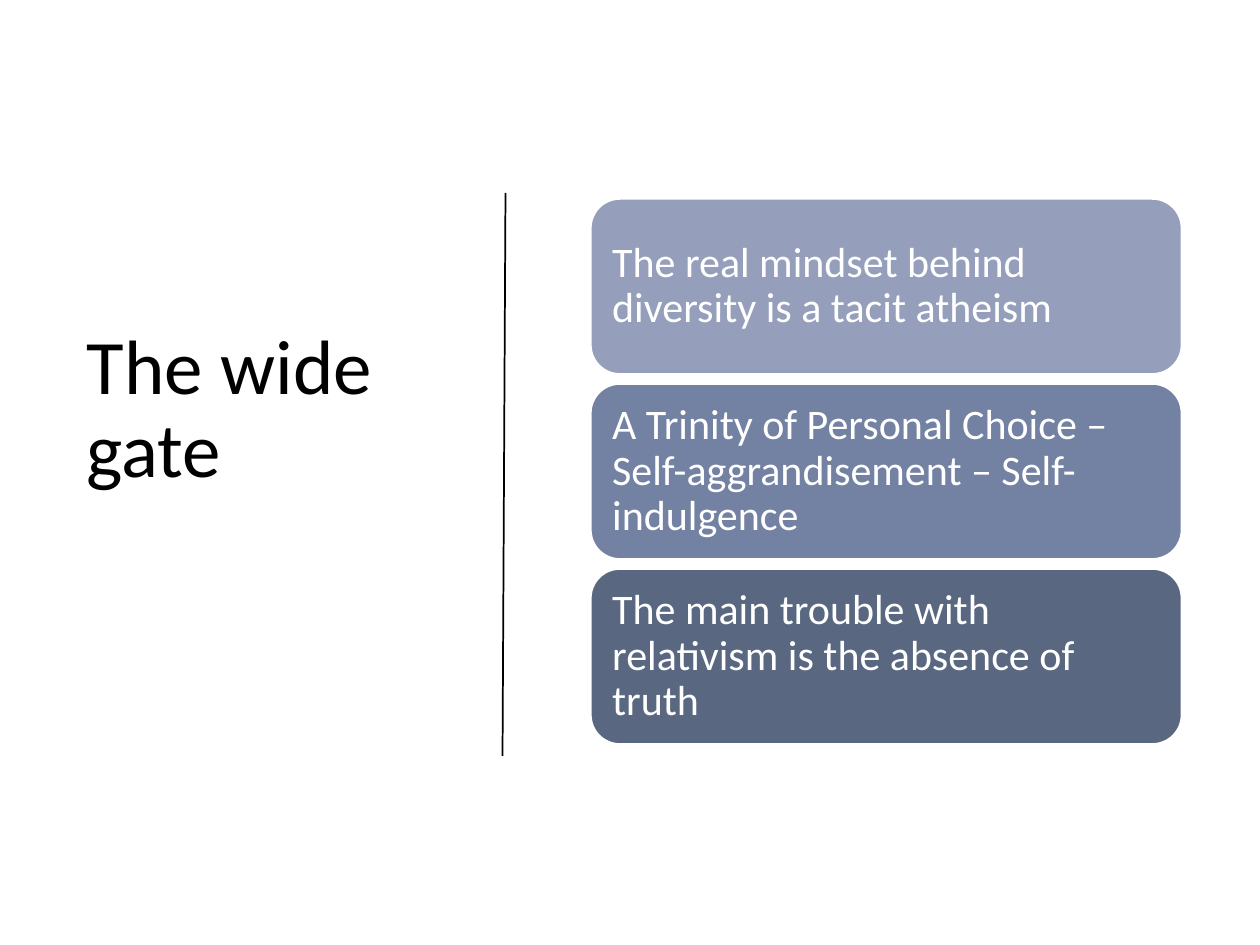
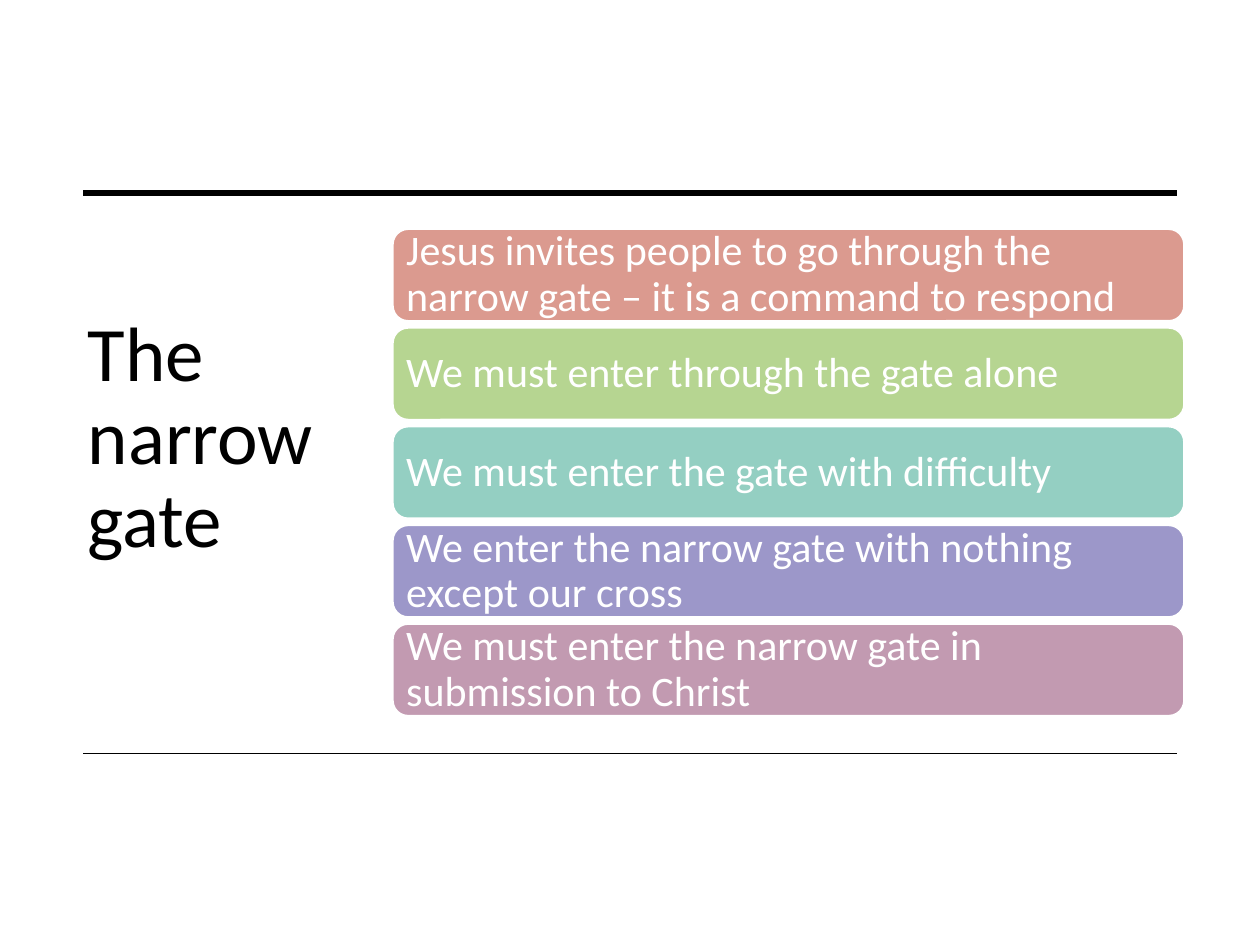
from dataclasses import dataclass

from lxml.etree import SubElement
from pptx import Presentation
from pptx.dml.color import RGBColor
from pptx.enum.shapes import MSO_CONNECTOR, MSO_SHAPE
from pptx.enum.text import MSO_ANCHOR, MSO_AUTO_SIZE, PP_ALIGN
from pptx.oxml.ns import qn
from pptx.slide import Slide
from pptx.text.text import TextFrame
from pptx.util import Cm, Pt

FONT = "Calibri"
BLACK, WHITE = "000000", "FFFFFF"
TITLE_SIZE, BOX_SIZE = 44, 24


@dataclass(frozen=True)
class Rule:
    x1: float
    y1: float
    x2: float
    y2: float
    weight: float


@dataclass(frozen=True)
class Stack:
    """Equal rounded boxes, one below the other; lengths in centimetres."""
    left: float
    top: float
    width: float
    height: float
    pitch: float
    inset: float
    points: tuple[tuple[str, str], ...]


@dataclass(frozen=True)
class GateSlide:
    title: str
    title_area: tuple[float, float, float, float]
    rules: tuple[Rule, ...]
    stack: Stack


GATES = (
    GateSlide(
        "The wide gate", (1.5, 3.53, 7.54, 9.5),
        (Rule(10.13, 15.24, 10.19, 3.89, 1),),
        Stack(11.91, 4.01, 11.91, 3.53, 3.73, 0.26, (
            ("959EBB", "The real mindset behind diversity is a tacit atheism"),
            ("7381A2", "A Trinity of Personal Choice – Self-aggrandisement – Self-indulgence"),
            ("596781", "The main trouble with relativism is the absence of truth"),
        )),
    ),
    GateSlide(
        "The narrow gate", (1.52, 4.27, 7.62, 9.17),
        (Rule(1.68, 3.89, 23.72, 3.89, 3.5), Rule(1.68, 15.19, 23.72, 15.19, 1)),
        Stack(7.92, 4.62, 15.95, 1.85, 1.99, 0.18, (
            ("DB9A8F", "Jesus invites people to go through the narrow gate – it is a command to respond"),
            ("B6D591", "We must enter through the gate alone"),
            ("94CFC2", "We must enter the gate with difficulty"),
            ("9C97C9", "We enter the narrow gate with nothing except our cross"),
            ("C29AB1", "We must enter the narrow gate in submission to Christ"),
        )),
    ),
)


def rgb(value: str) -> RGBColor:
    return RGBColor.from_string(value)


def write(tf: TextFrame, text: str, *, size: float, color: str,
          inset_x: float = 0.25, inset_y: float = 0.13) -> None:
    tf.word_wrap = True
    tf.auto_size = MSO_AUTO_SIZE.NONE
    tf.vertical_anchor = MSO_ANCHOR.MIDDLE
    tf.margin_left = tf.margin_right = Cm(inset_x)
    tf.margin_top = tf.margin_bottom = Cm(inset_y)
    p = tf.paragraphs[0]
    p.alignment = PP_ALIGN.LEFT
    p.line_spacing = 0.9
    r = p.add_run()
    r.text = text
    r.font.name = FONT
    r.font.size = Pt(size)
    r.font.color.rgb = rgb(color)


def add_title(s: Slide, text: str, area: tuple[float, float, float, float]) -> None:
    sp = s.shapes.title
    sp.left, sp.top, sp.width, sp.height = map(Cm, area)
    write(sp.text_frame, text, size=TITLE_SIZE, color=BLACK)


def add_rule(s: Slide, rule: Rule) -> None:
    ends = map(Cm, (rule.x1, rule.y1, rule.x2, rule.y2))
    line = s.shapes.add_connector(MSO_CONNECTOR.STRAIGHT, *ends)
    line.line.color.rgb = rgb(BLACK)
    line.line.width = Pt(rule.weight)
    SubElement(line._element.spPr, qn("a:effectLst"))


def add_stack(s: Slide, stack: Stack) -> None:
    for i, (color, text) in enumerate(stack.points):
        sp = s.shapes.add_shape(
            MSO_SHAPE.ROUNDED_RECTANGLE, Cm(stack.left), Cm(stack.top + i * stack.pitch),
            Cm(stack.width), Cm(stack.height))
        sp.shadow.inherit = False
        sp.fill.solid()
        sp.fill.fore_color.rgb = rgb(color)
        sp.line.color.rgb = rgb(WHITE)
        sp.line.width = Pt(1)
        write(sp.text_frame, text, size=BOX_SIZE, color=WHITE,
              inset_x=stack.inset, inset_y=0)


def main() -> None:
    prs = Presentation()
    prs.slide_width, prs.slide_height = Cm(25.4), Cm(19.05)
    title_only = prs.slide_layouts[5]
    for gate in GATES:
        s = prs.slides.add_slide(title_only)
        add_title(s, gate.title, gate.title_area)
        for rule in gate.rules:
            add_rule(s, rule)
        add_stack(s, gate.stack)
    prs.save("out.pptx")


if __name__ == "__main__":
    main()
